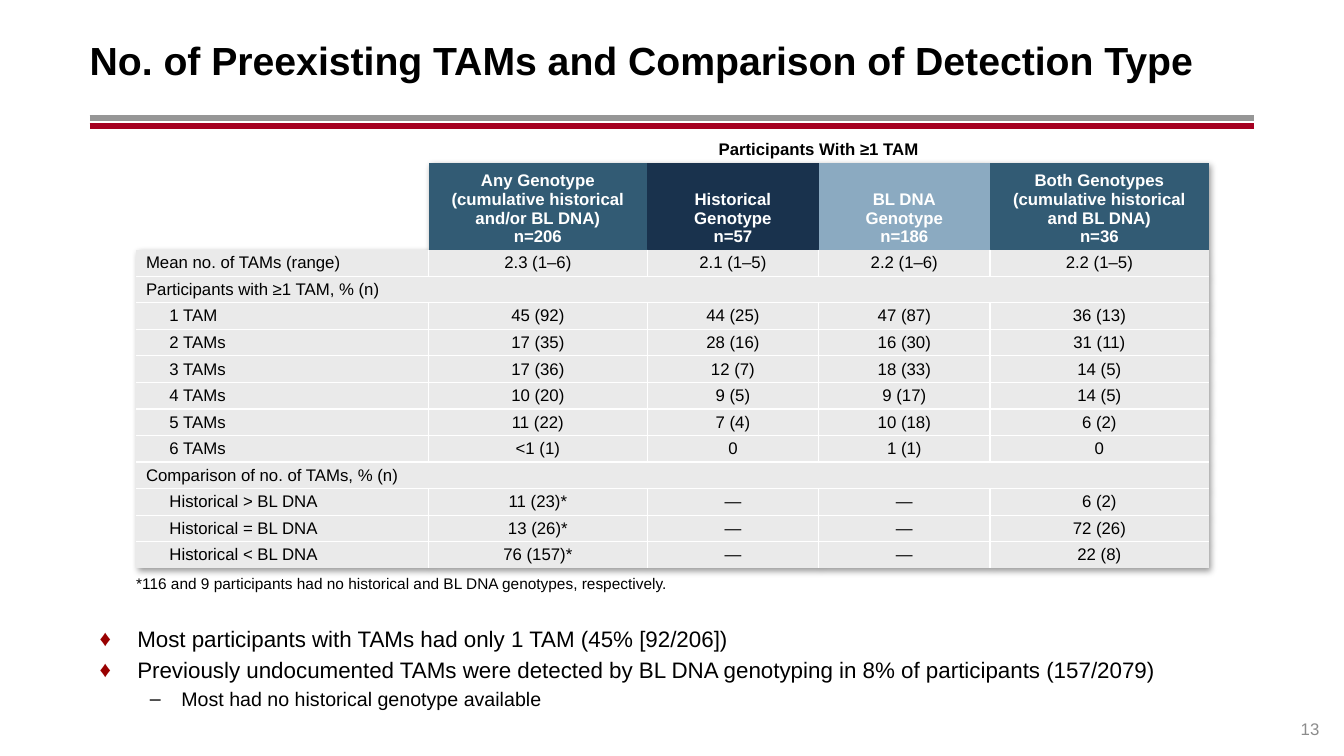
from lxml.etree import SubElement
from pptx import Presentation
from pptx.dml.color import RGBColor
from pptx.enum.shapes import MSO_CONNECTOR
from pptx.enum.text import MSO_ANCHOR as Anchor, PP_ALIGN as Align
from pptx.oxml import parse_xml
from pptx.oxml.ns import nsdecls, qn
from pptx.util import Cm, Pt

BLACK = RGBColor(0x00, 0x00, 0x00)
WHITE = RGBColor(0xFF, 0xFF, 0xFF)
GREY_RULE = RGBColor(0x96, 0x96, 0x96)
RED_RULE = RGBColor(0xA5, 0x00, 0x21)
BULLET_RED = RGBColor(0x99, 0x00, 0x00)
PAGE_GREY = RGBColor(0x8C, 0x8C, 0x8C)
TEAL = RGBColor(0x32, 0x5B, 0x74)
NAVY = RGBColor(0x19, 0x32, 0x4D)
LIGHT_BLUE = RGBColor(0x8B, 0xAA, 0xC1)
ROW_GREY = RGBColor(0xEA, 0xEA, 0xEA)

NO_STYLE = "{2D5ABB26-0587-4C30-8999-92F81FD0307C}"
COLUMN_WIDTHS = (7.37, 5.51, 4.32, 4.32, 5.51)
SPANNER_HEIGHT, HEADER_HEIGHT, ROW_HEIGHT = 0.63, 2.03, 0.63

HEADERS = [
    ("Any Genotype\n(cumulative historical and/or BL DNA)\nn=206", TEAL),
    ("Historical\nGenotype\nn=57", NAVY),
    ("BL DNA\nGenotype\nn=186", LIGHT_BLUE),
    ("Both Genotypes (cumulative historical and BL DNA)\nn=36", TEAL),
]

# Label, indented or not, and the values; a section row has no values
ROWS = [
    ("Mean no. of TAMs (range)", False, ("2.3 (1–6)", "2.1 (1–5)", "2.2 (1–6)", "2.2 (1–5)")),
    ("Participants with ≥1 TAM, % (n)", False, ()),
    ("1 TAM", True, ("45 (92)", "44 (25)", "47 (87)", "36 (13)")),
    ("2 TAMs", True, ("17 (35)", "28 (16)", "16 (30)", "31 (11)")),
    ("3 TAMs", True, ("17 (36)", "12 (7)", "18 (33)", "14 (5)")),
    ("4 TAMs", True, ("10 (20)", "9 (5)", "9 (17)", "14 (5)")),
    ("5 TAMs", True, ("11 (22)", "7 (4)", "10 (18)", "6 (2)")),
    ("6 TAMs", True, ("<1 (1)", "0", "1 (1)", "0")),
    ("Comparison of no. of TAMs, % (n)", False, ()),
    ("Historical > BL DNA", True, ("11 (23)*", "—", "—", "6 (2)")),
    ("Historical = BL DNA", True, ("13 (26)*", "—", "—", "72 (26)")),
    ("Historical < BL DNA", True, ("76 (157)*", "—", "—", "22 (8)")),
]

# Text, level, size, left margin, hanging indent, bullet, bullet colour
BULLETS = [
    ("Most participants with TAMs had only 1 TAM (45% [92/206])",
     0, 16, 0.95, -0.95, "♦", BULLET_RED),
    ("Previously undocumented TAMs were detected by BL DNA genotyping "
     "in 8% of participants (157/2079)", 0, 16, 0.95, -0.95, "♦", BULLET_RED),
    ("Most had no historical genotype available", 1, 14, 2.06, -0.79, "–", BLACK),
]


def write_text(paragraph, text, size=12, color=BLACK, bold=False, align=Align.LEFT,
               margin=0, indent=0):
    paragraph.alignment = align
    properties = paragraph._p.get_or_add_pPr()
    properties.set("marL", str(Cm(margin)))
    properties.set("indent", str(Cm(indent)))
    if not text:
        # An empty cell keeps the text size of its row
        SubElement(paragraph._p, qn("a:endParaRPr"), sz=str(size * 100))
        return
    run = paragraph.add_run()
    run.text = text
    run.font.name = "Arial"
    run.font.size = Pt(size)
    run.font.bold = bold
    run.font.color.rgb = color


def add_text_box(slide, left, top, width, height, anchor=Anchor.TOP, insets=(0, 0, 0, 0)):
    frame = slide.shapes.add_textbox(Cm(left), Cm(top), Cm(width), Cm(height)).text_frame
    frame.word_wrap = True
    frame.vertical_anchor = anchor
    (frame.margin_left, frame.margin_top,
     frame.margin_right, frame.margin_bottom) = map(Cm, insets)
    return frame


def add_rule(slide, y, color):
    rule = slide.shapes.add_connector(
        MSO_CONNECTOR.STRAIGHT, Cm(2.26), Cm(y), Cm(31.6), Cm(y))
    rule.line.color.rgb = color
    rule.line.width = Pt(4.25)
    SubElement(rule._element.spPr, qn("a:effectLst"))


def add_bullet(paragraph, text, level, size, margin, indent, character, color):
    paragraph.level = level
    paragraph.space_before = Pt(size * 0.2)
    write_text(paragraph, text, size=size, margin=margin, indent=indent)
    properties = paragraph._p.get_or_add_pPr()
    bullet_color = SubElement(properties, qn("a:buClr"))
    SubElement(bullet_color, qn("a:srgbClr"), val=str(color))
    SubElement(properties, qn("a:buFont"), typeface="Arial")
    SubElement(properties, qn("a:buChar"), char=character)


def fill_cell(cell, text, fill=None, anchor=Anchor.MIDDLE, borders=(), **text_format):
    cell.margin_left = cell.margin_right = Cm(0.25)
    cell.margin_top = cell.margin_bottom = Cm(0.08)
    cell.vertical_anchor = anchor
    frame = cell.text_frame
    for number, line in enumerate(text.split("\n")):
        paragraph = frame.add_paragraph() if number else frame.paragraphs[0]
        write_text(paragraph, line, **text_format)
    if fill is None:
        cell.fill.background()
    else:
        cell.fill.solid()
        cell.fill.fore_color.rgb = fill
    # Borders come before the fill, in the order L, R, T, B
    for position, side in enumerate(borders):
        cell._tc.get_or_add_tcPr().insert(position, parse_xml(
            f'<a:ln{side} {nsdecls("a")} w="12700"><a:solidFill>'
            f'<a:srgbClr val="{WHITE}"/></a:solidFill></a:ln{side}>'))


def inner_borders(row, column, is_section):
    last_row, last_column = len(ROWS) - 1, len(COLUMN_WIDTHS) - 1
    shown = {"L": column > 0 and not is_section,
             "R": column < last_column and not is_section,
             "T": row > 0,
             "B": row < last_row}
    return [side for side, visible in shown.items() if visible]


def add_tam_table(slide):
    heights = [SPANNER_HEIGHT, HEADER_HEIGHT] + [ROW_HEIGHT] * len(ROWS)
    table = slide.shapes.add_table(
        len(heights), len(COLUMN_WIDTHS), Cm(3.43), Cm(3.43),
        Cm(sum(COLUMN_WIDTHS)), Cm(sum(heights))).table
    table.first_row = table.horz_banding = False
    for column, width in zip(table.columns, COLUMN_WIDTHS):
        column.width = Cm(width)
    for row, height in zip(table.rows, heights):
        row.height = Cm(height)

    # No table style, soft shadow to the lower right
    properties = table._tbl.tblPr
    properties.find(qn("a:tableStyleId")).text = NO_STYLE
    properties.insert(0, parse_xml(
        f'<a:effectLst {nsdecls("a")}><a:outerShdw blurRad="50800" dist="38100" dir="2700000" '
        'algn="tl" rotWithShape="0"><a:srgbClr val="000000"><a:alpha val="40000"/>'
        '</a:srgbClr></a:outerShdw></a:effectLst>'))

    # Header rows
    table.cell(0, 0).merge(table.cell(1, 0))
    table.cell(0, 1).merge(table.cell(0, 4))
    heading = {"anchor": Anchor.BOTTOM, "bold": True, "align": Align.CENTER}
    fill_cell(table.cell(0, 0), "")
    fill_cell(table.cell(0, 1), "Participants With ≥1 TAM", **heading)
    for column, (text, fill) in enumerate(HEADERS, 1):
        fill_cell(table.cell(1, column), text, fill, color=WHITE, **heading)

    # Body rows
    for row, (label, indented, values) in enumerate(ROWS):
        for column, text in enumerate((label, *(values or [""] * len(HEADERS)))):
            fill_cell(table.cell(row + 2, column), text, ROW_GREY,
                      borders=inner_borders(row, column, not values),
                      align=Align.CENTER if column else Align.LEFT,
                      margin=0.59 if indented and column == 0 else 0)


def main():
    presentation = Presentation()
    presentation.slide_width, presentation.slide_height = Cm(33.87), Cm(19.05)
    slide = presentation.slides.add_slide(presentation.slide_layouts[6])

    # Title and double rule
    add_rule(slide, 2.97, GREY_RULE)
    add_rule(slide, 3.18, RED_RULE)
    title = add_text_box(slide, 2.26, 0.43, 29.54, 2.18, Anchor.MIDDLE, (0, 0.13, 0.25, 0.13))
    write_text(title.paragraphs[0], "No. of Preexisting TAMs and Comparison of Detection Type",
               size=28, bold=True)

    # Page number
    page = add_text_box(slide, 31.6, 17.6, 1.65, 1.02, Anchor.BOTTOM)
    write_text(page.paragraphs[0], "13", color=PAGE_GREY, align=Align.RIGHT)

    # Table and footnote
    add_tam_table(slide)
    footnote = add_text_box(slide, 3.43, 14.43, 28.58, 0.51, Anchor.BOTTOM)
    write_text(footnote.paragraphs[0], "*116 and 9 participants had no historical and BL DNA "
               "genotypes, respectively.", size=11)

    # Conclusions
    conclusions = add_text_box(slide, 2.26, 15.62, 29.34, 2.72, insets=(0.25, 0.13, 0.25, 0.13))
    for number, bullet in enumerate(BULLETS):
        paragraph = conclusions.add_paragraph() if number else conclusions.paragraphs[0]
        add_bullet(paragraph, *bullet)

    presentation.save("out.pptx")


if __name__ == "__main__":
    main()
